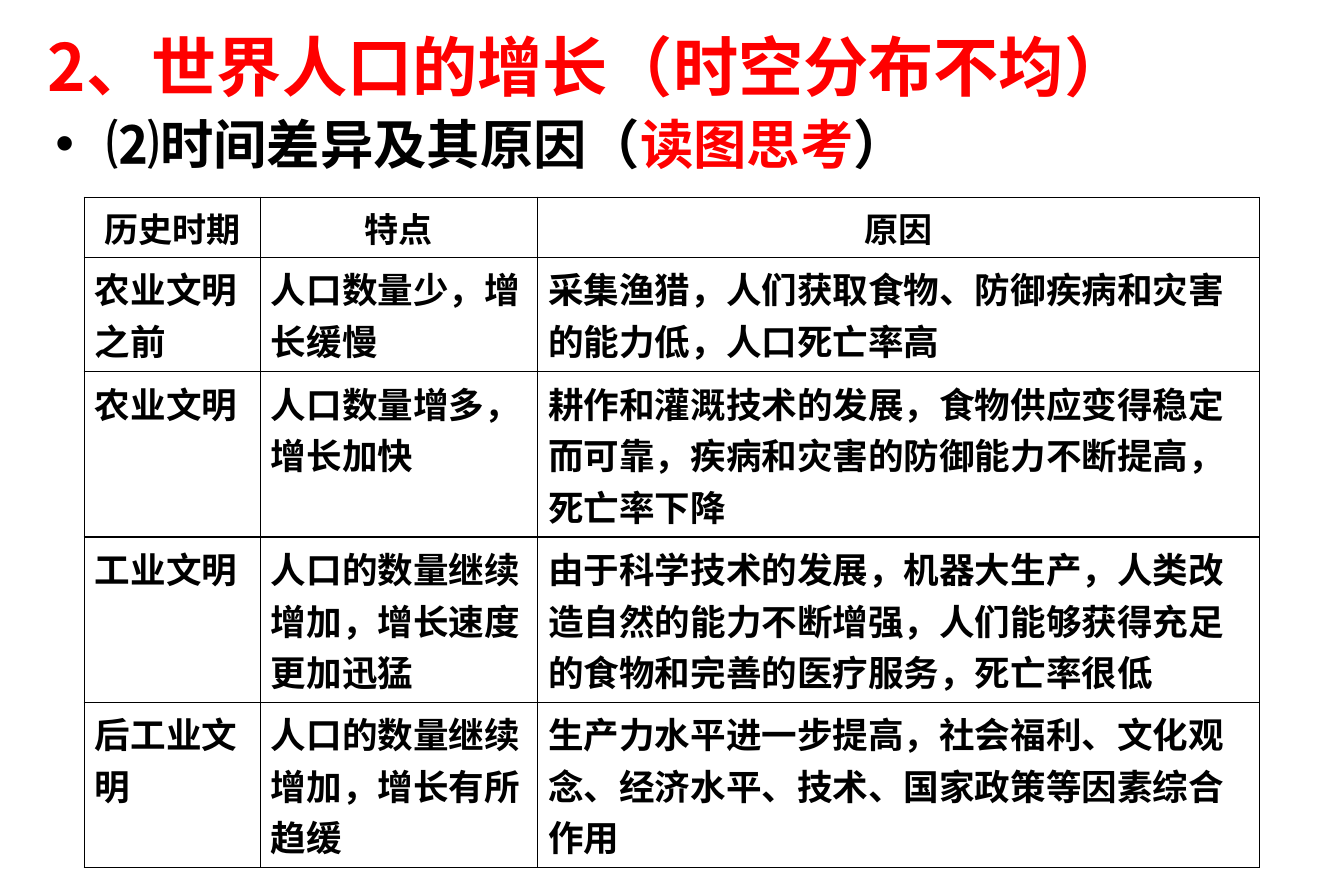
from lxml.etree import SubElement
from pptx import Presentation
from pptx.dml.color import RGBColor
from pptx.enum.text import MSO_ANCHOR, MSO_AUTO_SIZE, PP_ALIGN
from pptx.oxml.ns import qn
from pptx.util import Emu, Pt

PX = 9144  # 100 px to the inch
RED = RGBColor(0xFF, 0x00, 0x00)
BLACK = RGBColor(0x00, 0x00, 0x00)
WHITE = RGBColor(0xFF, 0xFF, 0xFF)
CHINESE_FONT = "Noto Sans CJK SC"
HEADER_FONT = "Calibri"

TITLE = "2、世界人口的增长（时空分布不均）"
SUBTITLE_RUNS = [("⑵时间差异及其原因（", BLACK), ("读图思考", RED), ("）", BLACK)]
COLUMN_WIDTHS = [165, 260, 677]
ROW_HEIGHTS = [56, 107, 155, 155, 155]
PERIODS = [
    ("历史时期", "特点", "原因"),
    ("农业文明之前", "人口数量少，增长缓慢",
     "采集渔猎，人们获取食物、防御疾病和灾害的能力低，人口死亡率高"),
    ("农业文明", "人口数量增多，增长加快",
     "耕作和灌溉技术的发展，食物供应变得稳定而可靠，疾病和灾害的防御能力不断提高，死亡率下降"),
    ("工业文明", "人口的数量继续增加，增长速度更加迅猛",
     "由于科学技术的发展，机器大生产，人类改造自然的能力不断增强，人们能够获得充足的食物和完善的医疗服务，死亡率很低"),
    ("后工业文明", "人口的数量继续增加，增长有所趋缓",
     "生产力水平进一步提高，社会福利、文化观念、经济水平、技术、国家政策等因素综合作用"),
]


def px(length):
    return Emu(length * PX)


def format_paragraph(paragraph, size, color=BLACK, name=CHINESE_FONT, alignment=PP_ALIGN.LEFT):
    paragraph.alignment = alignment
    font = paragraph.font
    font.size, font.bold, font.name = Pt(size), True, name
    font.color.rgb = color
    SubElement(font._element, qn("a:ea"), typeface=CHINESE_FONT)


def format_frame(frame, anchor):
    frame.word_wrap = True
    frame.auto_size = MSO_AUTO_SIZE.NONE
    frame.vertical_anchor = anchor
    frame.margin_left = frame.margin_right = px(13)
    frame.margin_top = frame.margin_bottom = px(6)


def place_title(slide, left, top, width, height):
    title = slide.shapes.title
    title.left, title.top, title.width, title.height = map(px, (left, top, width, height))
    format_frame(title.text_frame, MSO_ANCHOR.MIDDLE)
    title.text_frame.text = TITLE
    format_paragraph(title.text_frame.paragraphs[0], 44, RED)


def place_subtitle(slide, left, top, width, height):
    box = slide.shapes.add_textbox(*map(px, (left, top, width, height)))
    format_frame(box.text_frame, MSO_ANCHOR.TOP)
    paragraph = box.text_frame.paragraphs[0]
    paragraph.space_before = Pt(7.2)
    properties = paragraph._p.get_or_add_pPr()
    properties.set("marL", str(px(48)))
    properties.set("indent", str(px(-48)))
    SubElement(properties, qn("a:buFont"), typeface="Arial")
    SubElement(properties, qn("a:buChar"), char="•")
    format_paragraph(paragraph, 36)
    for text, color in SUBTITLE_RUNS:
        run = paragraph.add_run()
        run.text = text
        run.font.color.rgb = color


def add_borders(cell):
    properties = cell._tc.get_or_add_tcPr()
    for side in ("lnL", "lnR", "lnT", "lnB"):
        line = SubElement(properties, qn(f"a:{side}"), w=str(Pt(1)))
        fill = SubElement(line, qn("a:solidFill"))
        SubElement(fill, qn("a:srgbClr"), val=str(BLACK))


def place_period_table(slide, left, top):
    frame = slide.shapes.add_table(
        len(ROW_HEIGHTS), len(COLUMN_WIDTHS), px(left), px(top),
        px(sum(COLUMN_WIDTHS)), px(sum(ROW_HEIGHTS)))
    table = frame.table
    for column, width in zip(table.columns, COLUMN_WIDTHS):
        column.width = px(width)
    for index, (row, height, texts) in enumerate(zip(table.rows, ROW_HEIGHTS, PERIODS)):
        row.height = px(height)
        for cell, text in zip(row.cells, texts):
            add_borders(cell)
            cell.fill.solid()
            cell.fill.fore_color.rgb = WHITE
            cell.text = text
            paragraph = cell.text_frame.paragraphs[0]
            if index == 0:
                format_paragraph(paragraph, 23, name=HEADER_FONT, alignment=PP_ALIGN.CENTER)
            else:
                format_paragraph(paragraph, 24)


def main():
    presentation = Presentation()
    presentation.slide_width, presentation.slide_height = px(1260), px(827)
    slide = presentation.slides.add_slide(presentation.slide_layouts[5])
    place_title(slide, 32, 0, 1165, 122)
    place_subtitle(slide, 39, 98, 1158, 87)
    place_period_table(slide, 79, 185)
    presentation.save("out.pptx")


if __name__ == "__main__":
    main()
